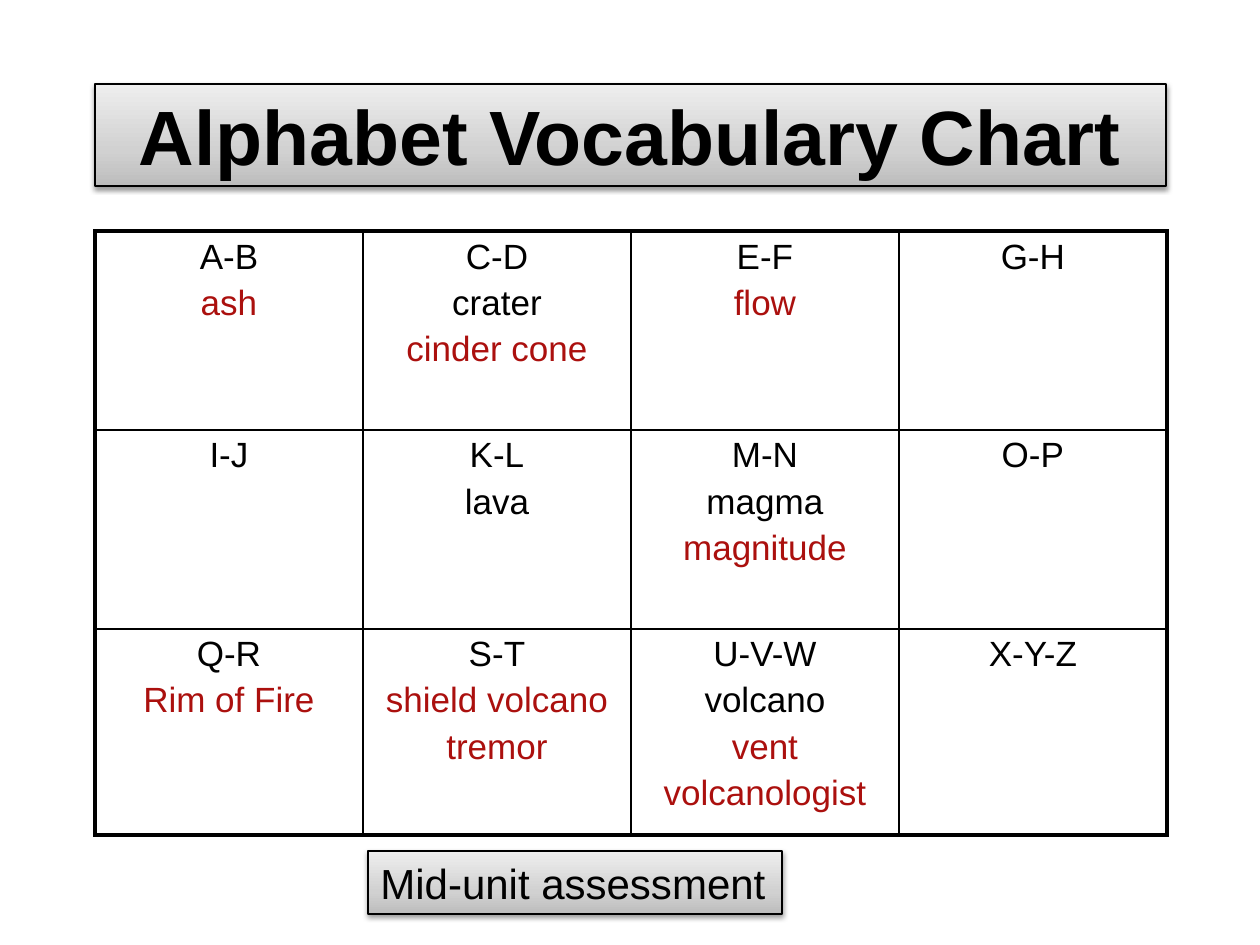
from pptx import Presentation
from pptx.dml.color import RGBColor
from pptx.enum.shapes import MSO_SHAPE
from pptx.enum.text import MSO_ANCHOR, MSO_AUTO_SIZE, PP_ALIGN
from pptx.oxml import parse_xml
from pptx.oxml.ns import nsdecls
from pptx.util import Emu, Pt

# Content: letters, known words (black), new words (red)
TITLE = "Alphabet Vocabulary Chart"
FOOTER = "Mid-unit assessment"
VOCABULARY = [
    [("A-B", [], ["ash"]),
     ("C-D", ["crater"], ["cinder cone"]),
     ("E-F", [], ["flow"]),
     ("G-H", [], [])],
    [("I-J", [], []),
     ("K-L", ["lava"], []),
     ("M-N", ["magma"], ["magnitude"]),
     ("O-P", [], [])],
    [("Q-R", [], ["Rim of Fire"]),
     ("S-T", [], ["shield volcano", "tremor"]),
     ("U-V-W", ["volcano"], ["vent", "volcanologist"]),
     ("X-Y-Z", [], [])],
]

# Layout in px
PX = 9144000 // 1260
SLIDE_SIZE = (1260, 945)
TITLE_BOX = (95, 84, 1071, 102)
TABLE_LEFT, TABLE_TOP = 95, 231
COLUMN_WIDTH = 268
ROW_HEIGHTS = [199, 199, 206]
FOOTER_BOX = (368, 851, 414, 63)

# Style
FONT = "Arial"
BLACK = RGBColor(0x00, 0x00, 0x00)
RED = RGBColor(0xAB, 0x10, 0x0E)
GRADIENT = [(0, RGBColor(0xBD, 0xBD, 0xBD)),
            (35, RGBColor(0xD1, 0xD1, 0xD1)),
            (100, RGBColor(0xEE, 0xEE, 0xEE))]
OUTER_BORDER, INNER_BORDER = Pt(2.25), Pt(1)


def px(*values):
    return [Emu(value * PX) for value in values]


def add_run(paragraph, text, size, color=BLACK, bold=False):
    run = paragraph.add_run()
    run.text = text
    run.font.name = FONT
    run.font.size = Pt(size)
    run.font.bold = bold
    run.font.color.rgb = color


def style_panel(shape):
    """Grey gradient, thin black outline and soft shadow below."""
    stops = "".join(
        f'<a:gs pos="{position * 1000}"><a:srgbClr val="{color}"/></a:gs>'
        for position, color in GRADIENT)
    properties = shape.element.spPr
    properties.append(parse_xml(
        f'<a:gradFill {nsdecls("a")} rotWithShape="1"><a:gsLst>{stops}</a:gsLst>'
        '<a:lin ang="16200000" scaled="0"/></a:gradFill>'))
    shape.line.color.rgb = BLACK
    shape.line.width = Pt(0.75)
    properties.append(parse_xml(
        f'<a:effectLst {nsdecls("a")}><a:outerShdw blurRad="40000" dist="20000" '
        f'dir="5400000" rotWithShape="0"><a:srgbClr val="{BLACK}">'
        '<a:alpha val="38000"/></a:srgbClr></a:outerShdw></a:effectLst>'))


def set_borders(cell, widths):
    for side, width in zip("LRTB", widths):
        cell._tc.get_or_add_tcPr().append(parse_xml(
            f'<a:ln{side} {nsdecls("a")} w="{width}"><a:solidFill>'
            f'<a:srgbClr val="{BLACK}"/></a:solidFill></a:ln{side}>'))


def fill_cell(cell, letters, known, new):
    lines = [(text, BLACK) for text in [letters] + known]
    lines += [(text, RED) for text in new]
    frame = cell.text_frame
    for index, (text, color) in enumerate(lines):
        paragraph = frame.add_paragraph() if index else frame.paragraphs[0]
        paragraph.alignment = PP_ALIGN.CENTER
        # Spacing relative to the text size
        paragraph._p.get_or_add_pPr().insert(0, parse_xml(
            f'<a:spcBef {nsdecls("a")}><a:spcPct val="20000"/></a:spcBef>'))
        add_run(paragraph, text, 20, color)


def add_vocabulary_table(slide):
    row_count, column_count = len(VOCABULARY), len(VOCABULARY[0])
    table = slide.shapes.add_table(
        row_count, column_count,
        *px(TABLE_LEFT, TABLE_TOP, COLUMN_WIDTH * column_count, sum(ROW_HEIGHTS))).table
    table.first_row = table.horz_banding = False
    for column in table.columns:
        column.width = Emu(COLUMN_WIDTH * PX)
    for row, height in zip(table.rows, ROW_HEIGHTS):
        row.height = Emu(height * PX)
    for r, entries in enumerate(VOCABULARY):
        for c, entry in enumerate(entries):
            cell = table.cell(r, c)
            fill_cell(cell, *entry)
            on_edge = (c == 0, c == column_count - 1, r == 0, r == row_count - 1)
            set_borders(cell, [OUTER_BORDER if edge else INNER_BORDER for edge in on_edge])
            cell.fill.background()


def main():
    presentation = Presentation()
    presentation.slide_width, presentation.slide_height = px(*SLIDE_SIZE)
    slide = presentation.slides.add_slide(presentation.slide_layouts[5])

    # Title
    title = slide.shapes.title
    title.left, title.top, title.width, title.height = px(*TITLE_BOX)
    style_panel(title)
    title.text_frame.auto_size = MSO_AUTO_SIZE.NONE
    title.text_frame.vertical_anchor = MSO_ANCHOR.MIDDLE
    paragraph = title.text_frame.paragraphs[0]
    paragraph.alignment = PP_ALIGN.CENTER
    add_run(paragraph, TITLE, 44, bold=True)

    # Vocabulary grid
    add_vocabulary_table(slide)

    # Footer label
    footer = slide.shapes.add_shape(MSO_SHAPE.RECTANGLE, *px(*FOOTER_BOX))
    style_panel(footer)
    footer.text_frame.word_wrap = False
    footer.text_frame.auto_size = MSO_AUTO_SIZE.SHAPE_TO_FIT_TEXT
    paragraph = footer.text_frame.paragraphs[0]
    paragraph.alignment = PP_ALIGN.LEFT
    add_run(paragraph, FOOTER, 24)

    presentation.save("out.pptx")


if __name__ == "__main__":
    main()
